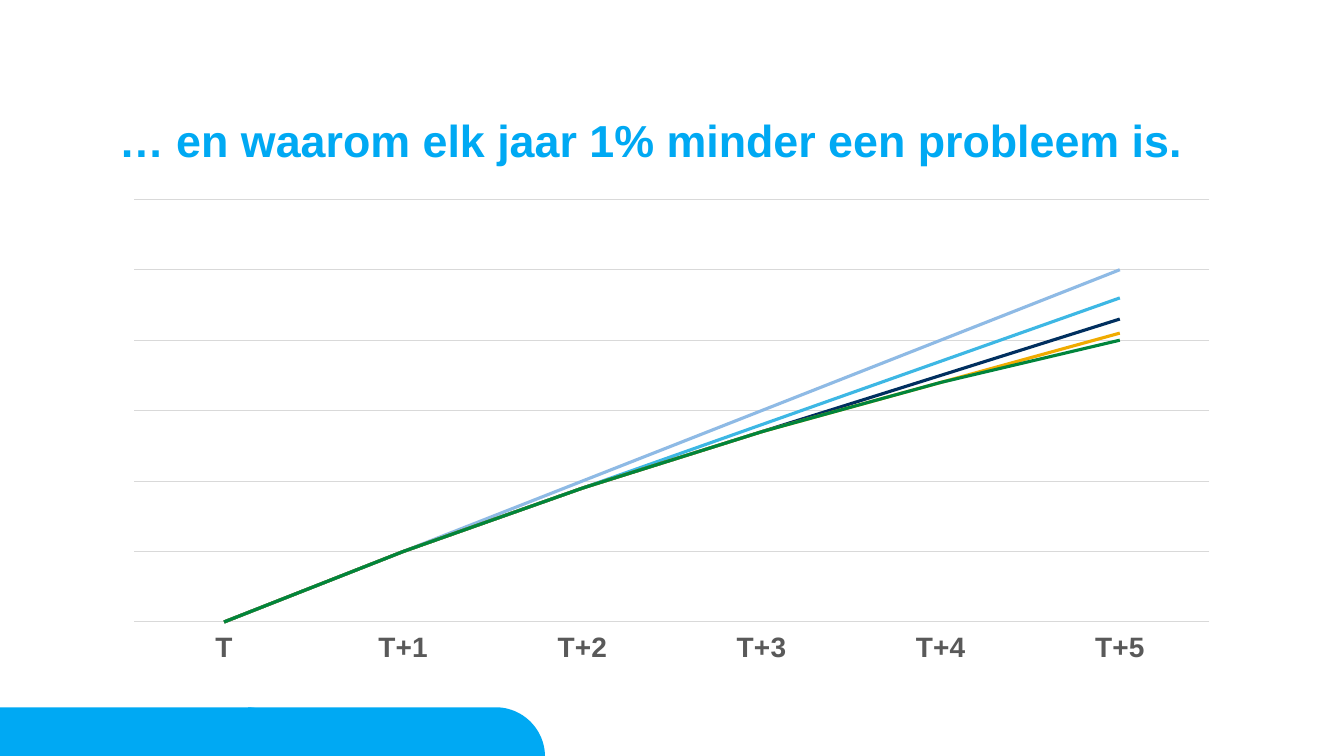
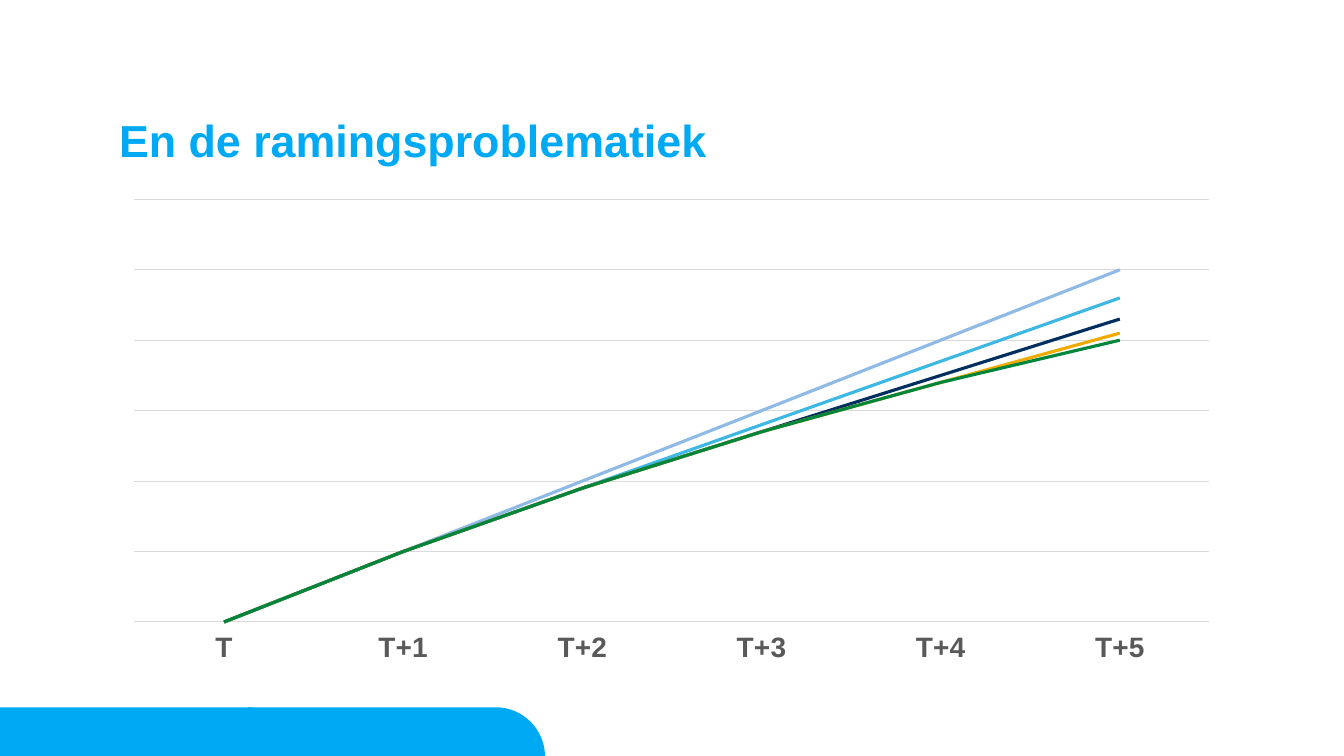
import math

from lxml import etree
from pptx import Presentation
from pptx.chart.data import CategoryChartData
from pptx.dml.color import RGBColor
from pptx.enum.chart import XL_CHART_TYPE, XL_TICK_LABEL_POSITION, XL_TICK_MARK
from pptx.enum.text import MSO_ANCHOR
from pptx.oxml.ns import qn
from pptx.util import Pt

LINE = XL_CHART_TYPE.LINE
NO_TICK = XL_TICK_MARK.NONE
LABELS_LOW = XL_TICK_LABEL_POSITION.LOW
TOP = MSO_ANCHOR.TOP

FONT = "Arial"
BLUE = RGBColor(0x00, 0xA9, 0xF3)
BLACK = RGBColor(0x00, 0x00, 0x00)
GREY = RGBColor(0x59, 0x59, 0x59)
GRID = RGBColor(0xD9, 0xD9, 0xD9)
LINE_COLORS = [
    RGBColor(0x8E, 0xBA, 0xE5),
    RGBColor(0x3D, 0xB7, 0xE4),
    RGBColor(0x00, 0x2F, 0x5F),
    RGBColor(0xF0, 0xAB, 0x00),
    RGBColor(0x00, 0x85, 0x3C),
]

# Shared layout, in points
SLIDE_W, SLIDE_H = 960, 540
LEFT, WIDTH = 85, 790
TITLE_TOP, TITLE_H = 85, 57
CHART_TOP, CHART_H = 142, 354
TAB_TOP, TAB_W, TAB_H = 505.2, 212, 35.3
TAB_LEFTS = (-0.5, 177.3)
ARC_STEPS = 24

TITLES = [
    "… en waarom elk jaar 1% minder een probleem is.",
    "En de ramingsproblematiek",
]
CATEGORIES = ["T", "T+1", "T+2", "T+3", "T+4", "T+5"]
SERIES = [
    (0, 20, 40, 60, 80, 100),
    (0, 20, 38, 56, 74, 92),
    (0, 20, 38, 54, 70, 86),
    (0, 20, 38, 54, 68, 82),
    (0, 20, 38, 54, 68, 80),
]
PLOT = {"x": 0.014, "y": 0, "w": 0.972, "h": 0.854}


def set_font(font, size, color, bold=False):
    font.name = FONT
    font.size = Pt(size)
    font.bold = bold
    font.color.rgb = color


def set_line(line, color, width):
    line.color.rgb = color
    line.width = Pt(width)


def add_tab(s, left):
    """Footer tab whose top right corner is a quarter circle."""
    right, bottom = left + TAB_W, TAB_TOP + TAB_H
    center_x = right - TAB_H
    angles = [math.pi / 2 * i / ARC_STEPS for i in range(ARC_STEPS + 1)]
    arc = [(center_x + TAB_H * math.sin(a), bottom - TAB_H * math.cos(a))
           for a in angles]
    points = [(Pt(x), Pt(y)) for x, y in [(left, TAB_TOP)] + arc]
    builder = s.shapes.build_freeform(Pt(left), Pt(bottom))
    builder.add_line_segments(points, close=True)
    sp = builder.convert_to_shape()
    sp.shadow.inherit = False
    sp.fill.solid()
    sp.fill.fore_color.rgb = BLUE
    sp.line.fill.background()


def add_title(s, text):
    sp = s.shapes.add_textbox(Pt(LEFT), Pt(TITLE_TOP), Pt(WIDTH), Pt(TITLE_H))
    tf = sp.text_frame
    tf.word_wrap = True
    tf.vertical_anchor = TOP
    tf.margin_left = tf.margin_right = tf.margin_top = tf.margin_bottom = 0
    tf.text = text
    p = tf.paragraphs[0]
    p.line_spacing = 0.9
    set_font(p.runs[0].font, 32, BLUE, bold=True)


def set_plot_area(chart):
    """Fix the inner plot area as fractions of the chart."""
    plot_area = chart.plots[0]._element.getparent()
    for old in plot_area.findall(qn("c:layout")):
        plot_area.remove(old)
    layout = etree.Element(qn("c:layout"))
    manual = etree.SubElement(layout, qn("c:manualLayout"))
    settings = [("layoutTarget", "inner"), ("xMode", "edge"), ("yMode", "edge")]
    for tag, value in settings + list(PLOT.items()):
        etree.SubElement(manual, qn(f"c:{tag}")).set("val", str(value))
    plot_area.insert(0, layout)


def add_line_chart(s):
    data = CategoryChartData()
    data.categories = CATEGORIES
    for number, values in enumerate(SERIES, 1):
        data.add_series(f"Series {number}", values)
    chart = s.shapes.add_chart(LINE, Pt(LEFT), Pt(CHART_TOP), Pt(WIDTH),
                               Pt(CHART_H), data).chart
    chart.has_title = False
    chart.has_legend = False
    set_font(chart.font, 10, BLACK)
    set_plot_area(chart)

    # Axes
    cat = chart.category_axis
    cat.major_tick_mark = cat.minor_tick_mark = NO_TICK
    cat.tick_label_position = LABELS_LOW
    set_font(cat.tick_labels.font, 20, GREY, bold=True)
    set_line(cat.format.line, GRID, 0.75)
    val = chart.value_axis
    val.minimum_scale, val.maximum_scale, val.major_unit = 0, 120, 20
    val.has_major_gridlines = True
    set_line(val.major_gridlines.format.line, GRID, 0.75)
    val.visible = False

    # Lines
    plot = chart.plots[0]
    plot.vary_by_categories = False
    for series, color in zip(plot.series, LINE_COLORS):
        series.smooth = False
        set_line(series.format.line, color, 2.25)


def add_slide(prs, title):
    s = prs.slides.add_slide(prs.slide_layouts[6])
    for left in TAB_LEFTS:
        add_tab(s, left)
    add_title(s, title)
    add_line_chart(s)


def main():
    prs = Presentation()
    prs.slide_width, prs.slide_height = Pt(SLIDE_W), Pt(SLIDE_H)
    for title in TITLES:
        add_slide(prs, title)
    prs.save("out.pptx")


if __name__ == "__main__":
    main()
